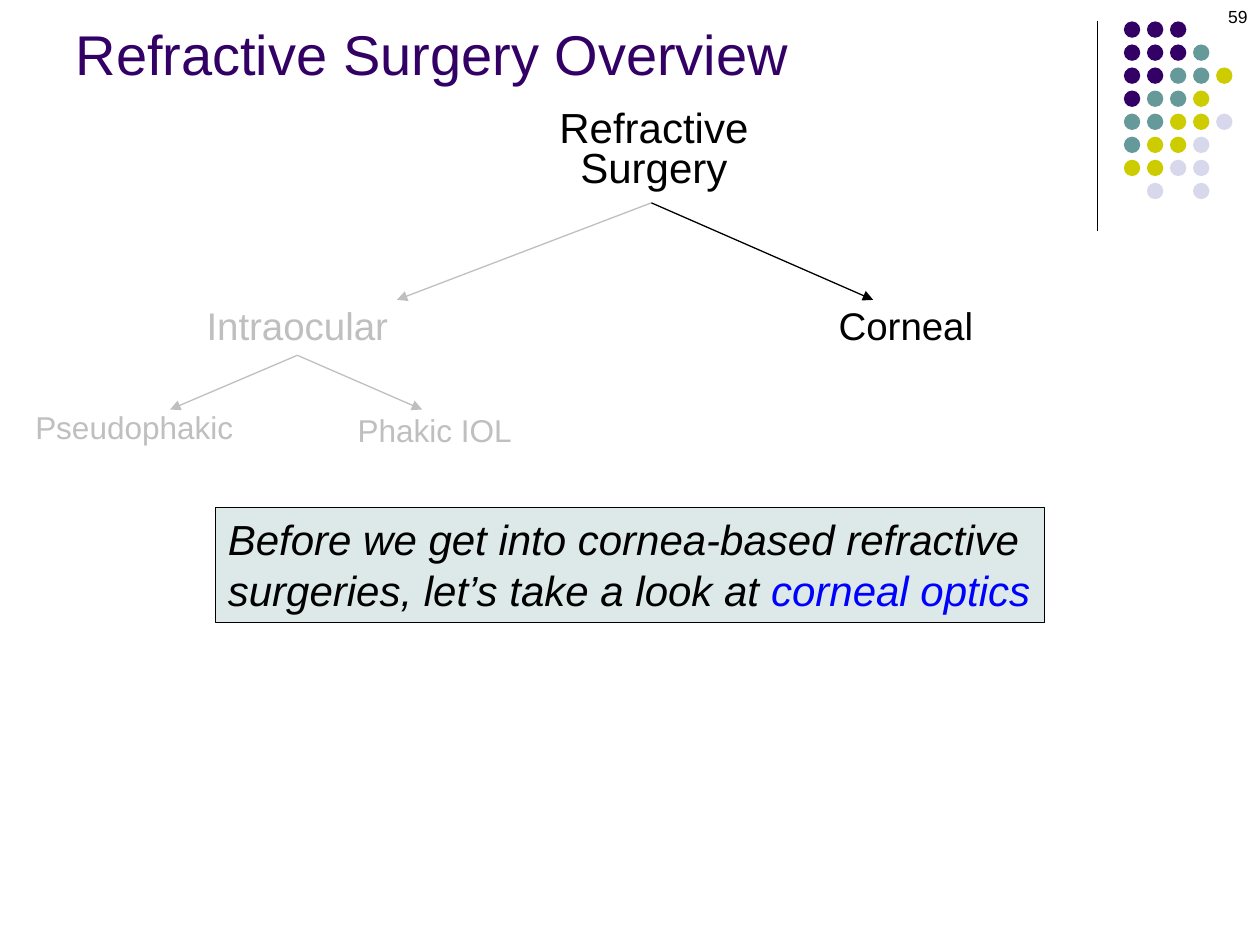
from lxml.etree import SubElement
from pptx import Presentation
from pptx.dml.color import RGBColor
from pptx.enum.shapes import MSO_CONNECTOR as CONNECTOR, MSO_SHAPE as SHAPE
from pptx.enum.text import MSO_ANCHOR as ANCHOR, MSO_AUTO_SIZE as AUTO_SIZE, PP_ALIGN as ALIGN
from pptx.oxml.ns import qn
from pptx.util import Inches, Pt

FONT = "Arial"
BLACK = RGBColor(0x00, 0x00, 0x00)
GRAY = RGBColor(0xBF, 0xBF, 0xBF)
PURPLE = RGBColor(0x33, 0x00, 0x66)
TEAL = RGBColor(0x66, 0x99, 0x99)
OLIVE = RGBColor(0xCC, 0xCC, 0x00)
LAVENDER = RGBColor(0xD8, 0xD8, 0xEC)
PALE_TEAL = RGBColor(0xDD, 0xE9, 0xE9)
BLUE = RGBColor(0x00, 0x00, 0xFF)

DOT_COLORS = {"P": PURPLE, "T": TEAL, "O": OLIVE, "L": LAVENDER}
DOT_ROWS = ["PPP", "PPPT", "PPTTO", "PTTO", "TTOOL", "TOOL", "OOLL", ".L.L"]
DOT_LEFT, DOT_TOP, DOT_PITCH, DOT_SIZE = 8.92, 0.17, 0.183, 0.13


def add_run(paragraph, text, size, color, italic=None):
    run = paragraph.add_run()
    run.text = text
    run.font.name = FONT
    run.font.size = Pt(size)
    run.font.color.rgb = color
    run.font.italic = italic


def add_line(slide, start, end, color, arrow=False):
    line = slide.shapes.add_connector(CONNECTOR.STRAIGHT, *map(Inches, start + end))
    line.line.color.rgb = color
    line.line.width = Pt(0.75)
    if arrow:
        SubElement(line.line._get_or_add_ln(), qn("a:tailEnd"), type="triangle")
    SubElement(line._element.spPr, qn("a:effectLst"))
    return line


def add_dots(slide):
    dots = slide.shapes.add_group_shape()
    for row, codes in enumerate(DOT_ROWS):
        for column, code in enumerate(codes):
            if code not in DOT_COLORS:
                continue
            dot = dots.shapes.add_shape(
                SHAPE.OVAL,
                Inches(DOT_LEFT + column * DOT_PITCH), Inches(DOT_TOP + row * DOT_PITCH),
                Inches(DOT_SIZE), Inches(DOT_SIZE))
            dot.shadow.inherit = False
            dot.fill.solid()
            dot.fill.fore_color.rgb = DOT_COLORS[code]
            dot.line.fill.background()


def add_topic(slide, lines, box, size, color, wrap=False):
    topic = slide.shapes.add_textbox(*map(Inches, box))
    frame = topic.text_frame
    frame.word_wrap = wrap
    frame.auto_size = AUTO_SIZE.SHAPE_TO_FIT_TEXT
    for index, text in enumerate(lines):
        paragraph = frame.add_paragraph() if index else frame.paragraphs[0]
        paragraph.alignment = ALIGN.CENTER
        paragraph.line_spacing = 0.8
        add_run(paragraph, text, size, color)
    return topic


def add_title(slide, text):
    title = slide.shapes.title
    title.left, title.top, title.width, title.height = map(Inches, (0.5, 0.13, 8.25, 0.61))
    frame = title.text_frame
    frame.vertical_anchor = ANCHOR.BOTTOM
    frame.auto_size = AUTO_SIZE.NONE
    frame.paragraphs[0].alignment = ALIGN.LEFT
    add_run(frame.paragraphs[0], text, 32, PURPLE)


def add_page_number(slide, number):
    page = slide.shapes.add_textbox(*map(Inches, (7.67, 0, 2.33, 0.5)))
    page.text_frame.word_wrap = True
    paragraph = page.text_frame.paragraphs[0]
    paragraph.alignment = ALIGN.RIGHT
    add_run(paragraph, number, 10, BLACK)


def add_callout(slide):
    callout = slide.shapes.add_shape(SHAPE.RECTANGLE, *map(Inches, (1.71, 4.03, 6.58, 0.91)))
    callout.shadow.inherit = False
    callout.fill.solid()
    callout.fill.fore_color.rgb = PALE_TEAL
    callout.line.color.rgb = BLACK
    callout.line.width = Pt(0.75)
    frame = callout.text_frame
    frame.word_wrap = True
    frame.auto_size = AUTO_SIZE.SHAPE_TO_FIT_TEXT
    frame.vertical_anchor = ANCHOR.TOP
    paragraph = frame.paragraphs[0]
    paragraph.alignment = ALIGN.LEFT
    add_run(paragraph, "Before we get into cornea-based refractive surgeries, let’s take a look at ",
            24, BLACK, True)
    add_run(paragraph, "corneal optics", 24, BLUE, True)


def add_topic_tree(slide):
    add_topic(slide, ["Refractive", "Surgery"], (4.33, 0.83, 1.72, 0.75), 24, BLACK)
    add_topic(slide, ["Corneal"], (6.55, 2.42, 1.28, 0.4), 22, BLACK, wrap=True)
    intraocular = add_topic(slide, ["Intraocular"], (1.53, 2.42, 1.66, 0.4), 22, GRAY)
    add_topic(slide, ["Pseudophakic"], (0.17, 3.25, 1.79, 0.34), 18, GRAY)
    add_topic(slide, ["Phakic IOL"], (2.73, 3.27, 1.44, 0.34), 18, GRAY)

    for end, color in (((3.15, 2.38), GRAY), ((6.93, 2.38), BLACK)):
        add_line(slide, (5.17, 1.61), end, color, arrow=True)
    for end in ((1.35, 3.25), (3.35, 3.25)):
        branch = add_line(slide, (2.35, 2.83), end, GRAY, arrow=True)
        branch.begin_connect(intraocular, 2)


def main():
    deck = Presentation()
    deck.slide_width, deck.slide_height = Inches(10), Inches(7.5)
    slide = deck.slides.add_slide(deck.slide_layouts[5])
    add_line(slide, (8.71, 0.17), (8.71, 1.83), BLACK)
    add_dots(slide)
    add_title(slide, "Refractive Surgery Overview")
    add_page_number(slide, "59")
    add_topic_tree(slide)
    add_callout(slide)
    deck.save("out.pptx")


if __name__ == "__main__":
    main()
